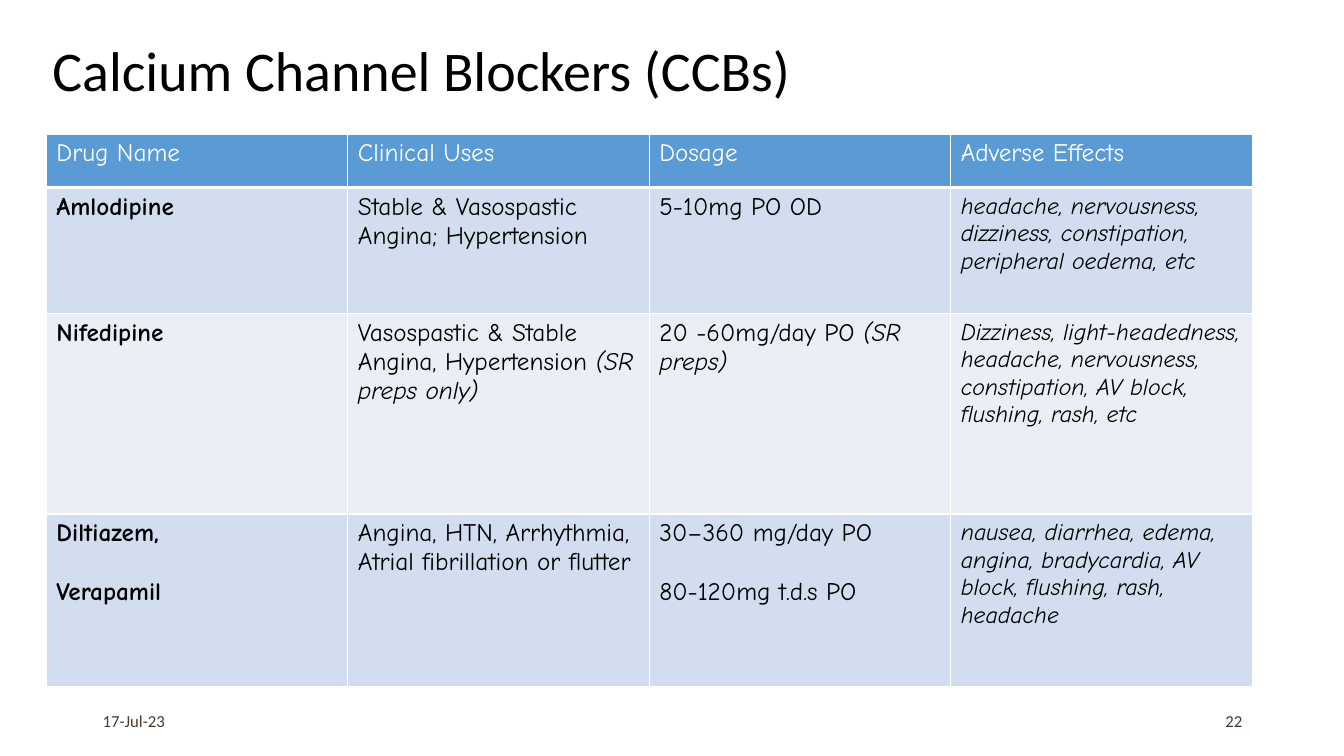
from lxml.etree import SubElement
from pptx import Presentation
from pptx.dml.color import RGBColor
from pptx.enum.text import MSO_ANCHOR, PP_ALIGN
from pptx.oxml.ns import qn
from pptx.util import Inches, Pt

BLACK = RGBColor(0x00, 0x00, 0x00)
WHITE = RGBColor(0xFF, 0xFF, 0xFF)
BLUE = RGBColor(0x5B, 0x9B, 0xD5)
BANDS = (RGBColor(0xD2, 0xDE, 0xEF), RGBColor(0xEA, 0xEF, 0xF7))
BROWN = RGBColor(0x4B, 0x38, 0x2E)

TITLE = "Calcium Channel Blockers (CCBs)"
HEADER = ("Drug Name", "Clinical Uses", "Dosage", "Adverse Effects")
# Each cell is a list of paragraphs; text after "|" is italic.
DRUGS = [
    (["Amlodipine"],
     ["Stable & Vasospastic Angina; Hypertension"],
     ["5-10mg PO OD"],
     ["|headache, nervousness, dizziness, constipation, peripheral oedema, etc"]),
    (["Nifedipine"],
     ["Vasospastic & Stable Angina, Hypertension |(SR preps only)"],
     ["20 -60mg/day PO |(SR preps)"],
     ["|Dizziness, light-headedness, headache, nervousness, constipation, "
      "AV block, flushing, rash, etc"]),
    (["Diltiazem,", "Verapamil"],
     ["Angina, HTN, Arrhythmia, Atrial fibrillation or flutter"],
     ["30–360 mg/day PO", "80-120mg t.d.s PO"],
     ["|nausea, diarrhea, edema, angina, bradycardia, AV block, flushing, "
      "rash, headache"]),
]
FOOTERS = [("22", 9.42, PP_ALIGN.RIGHT), ("17-Jul-23", 0.92, PP_ALIGN.LEFT)]

TABLE_LEFT, TABLE_TOP, COL_WIDTH = 0.46, 1.33, 2.99
ROW_HEIGHTS = (0.53, 1.25, 1.99, 1.71)
PARAGRAPH_GAP = Pt(21)
TABLE_FONT = {"name": "Comic Neue", "size": Pt(18)}


def add_run(p, text, color, **font):
    r = p.add_run()
    r.text = text
    r.font.color.rgb = color
    for name, value in font.items():
        setattr(r.font, name, value)


def add_border(cell, side, width):
    ln = SubElement(cell._tc.get_or_add_tcPr(), qn(f"a:ln{side}"), w=str(Pt(width)))
    fill = SubElement(ln, qn("a:solidFill"))
    SubElement(fill, qn("a:srgbClr"), val=str(WHITE))


def style_cell(cell, color, bottom=1):
    for side, width in (("L", 1), ("R", 1), ("T", 1), ("B", bottom)):
        add_border(cell, side, width)
    cell.fill.solid()
    cell.fill.fore_color.rgb = color


def fill_drug_cell(cell, paragraphs, col):
    font = dict(TABLE_FONT, bold=col == 0)
    if col == len(HEADER) - 1:
        font["size"] = Pt(17)
    tf = cell.text_frame
    for i, text in enumerate(paragraphs):
        p = tf.add_paragraph() if i else tf.paragraphs[0]
        if i:
            p.space_before = PARAGRAPH_GAP
        plain, _, slanted = text.partition("|")
        for part, italic in ((plain, False), (slanted, True)):
            if part:
                add_run(p, part, BLACK, italic=italic, **font)


def add_title(s):
    title = s.shapes.title
    title.left, title.top = Inches(0.42), Inches(0.34)
    title.width, title.height = Inches(9), Inches(0.78)
    tf = title.text_frame
    tf.vertical_anchor = MSO_ANCHOR.MIDDLE
    p = tf.paragraphs[0]
    p.alignment = PP_ALIGN.LEFT
    p.line_spacing = 0.9
    add_run(p, TITLE, BLACK, name="Calibri", size=Pt(40))


def add_drug_table(s):
    table = s.shapes.add_table(
        len(ROW_HEIGHTS), len(HEADER), Inches(TABLE_LEFT), Inches(TABLE_TOP),
        Inches(COL_WIDTH * len(HEADER)), Inches(sum(ROW_HEIGHTS))).table
    for column in table.columns:
        column.width = Inches(COL_WIDTH)
    for row, height in zip(table.rows, ROW_HEIGHTS):
        row.height = Inches(height)
    for col, text in enumerate(HEADER):
        cell = table.cell(0, col)
        style_cell(cell, BLUE, bottom=3)
        add_run(cell.text_frame.paragraphs[0], text, WHITE, bold=False, **TABLE_FONT)
    for row, drug in enumerate(DRUGS, 1):
        for col, paragraphs in enumerate(drug):
            cell = table.cell(row, col)
            style_cell(cell, BANDS[(row - 1) % 2])
            fill_drug_cell(cell, paragraphs, col)


def add_footer(s, text, left, align):
    box = s.shapes.add_textbox(Inches(left), Inches(6.95), Inches(3), Inches(0.4))
    tf = box.text_frame
    tf.word_wrap = True
    tf.vertical_anchor = MSO_ANCHOR.MIDDLE
    p = tf.paragraphs[0]
    p.alignment = align
    add_run(p, text, BROWN, name="Calibri", size=Pt(12))


def main():
    prs = Presentation()
    prs.slide_width, prs.slide_height = Inches(13.33), Inches(7.5)
    s = prs.slides.add_slide(prs.slide_layouts[5])
    add_title(s)
    add_drug_table(s)
    for footer in FOOTERS:
        add_footer(s, *footer)
    prs.save("out.pptx")


if __name__ == "__main__":
    main()
